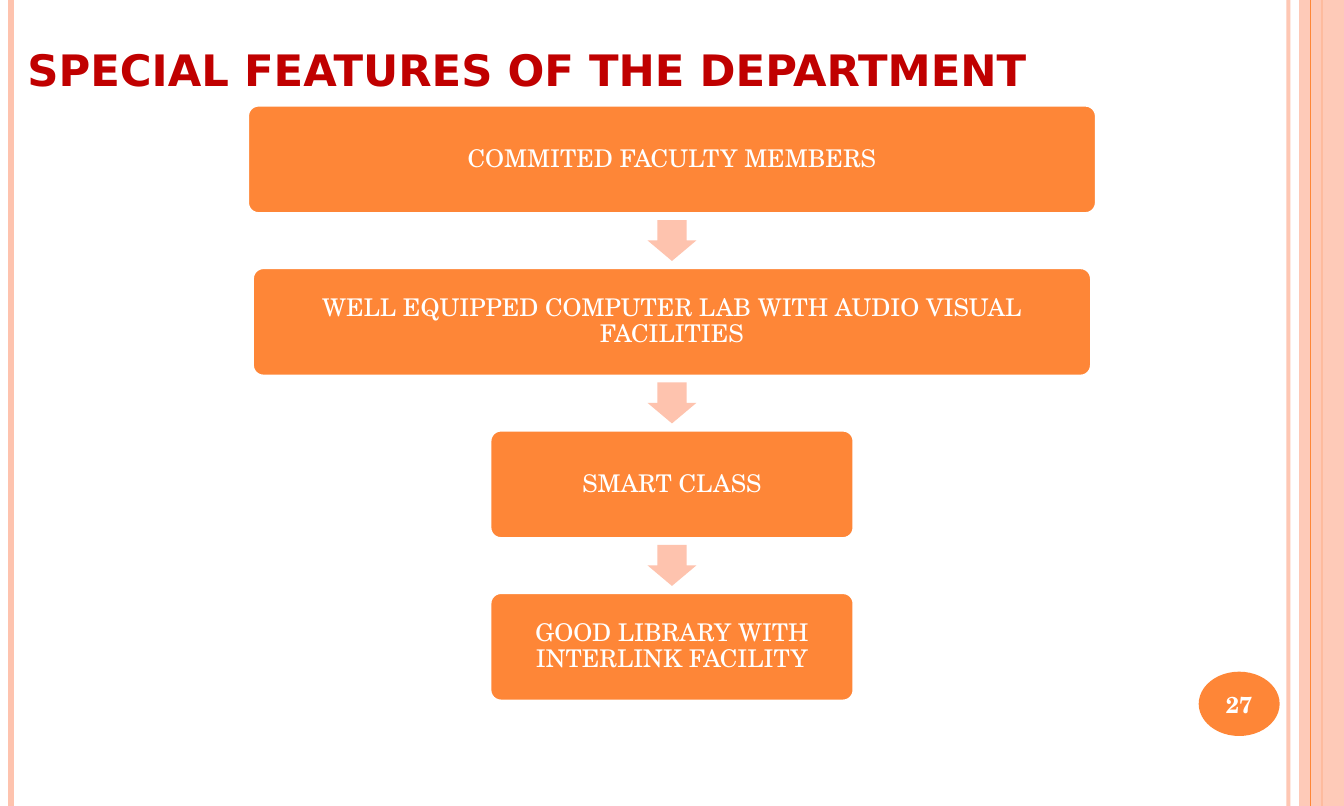
from pptx import Presentation
from pptx import util as u
from pptx.dml.color import RGBColor
from pptx.enum import shapes, text
from pptx.oxml.ns import qn
from lxml import etree

ORANGE = RGBColor(0xFE, 0x86, 0x37)
PEACH = RGBColor(0xFE, 0xC3, 0xAE)
RED = RGBColor(0xC0, 0x00, 0x00)
WHITE = RGBColor(0xFF, 0xFF, 0xFF)
SERIF = "TeX Gyre Schola"
SANS = "DejaVu Sans"
WIDE, HIGH = u.Cm(35), u.Cm(21)  # metric page size
KIND = shapes.MSO_SHAPE


def write(shape, words, size=18, font=SERIF, color=WHITE, bold=False,
          align=text.PP_ALIGN.CENTER, anchor=text.MSO_ANCHOR.MIDDLE,
          inset=(0.04, 0.04), space=1.0):
    """Put one formatted paragraph into a shape."""
    frame = shape.text_frame
    frame.word_wrap = True
    frame.auto_size = text.MSO_AUTO_SIZE.NONE
    frame.vertical_anchor = anchor
    frame.margin_left = frame.margin_right = u.Inches(inset[0])
    frame.margin_top = frame.margin_bottom = u.Inches(inset[1])
    para = frame.paragraphs[0]
    para.alignment = align
    para.line_spacing = space
    run = para.add_run()
    run.text = words
    run.font.size = u.Pt(size)
    run.font.name = font
    run.font.bold = bold
    run.font.color.rgb = color


def fade(fill, share):
    """Set the opacity of a solid fill, in percent."""
    tint = fill._xPr.find(qn("a:solidFill"))[0]
    etree.SubElement(tint, qn("a:alpha")).set("val", str(share * 1000))


class Page:
    def __init__(self, deck):
        self.slide = deck.slides.add_slide(deck.slide_layouts[5])
        self.items = self.slide.shapes

    def title(self, words, left, top, width, height):
        head = self.items.title
        head.left, head.top = u.Inches(left), u.Inches(top)
        head.width, head.height = u.Inches(width), u.Inches(height)
        write(head, words, size=32, font=SANS, color=RED, bold=True,
              align=text.PP_ALIGN.LEFT, anchor=text.MSO_ANCHOR.TOP,
              inset=(0.12, 0.06))

    def shape(self, kind, left, top, width, height, color, edge=None, adj=()):
        item = self.items.add_shape(kind, u.Inches(left), u.Inches(top),
                                    u.Inches(width), u.Inches(height))
        item.shadow.inherit = False
        item.fill.solid()
        item.fill.fore_color.rgb = color
        if edge is None:
            item.line.fill.background()
        else:
            item.line.color.rgb = edge
            item.line.width = u.Pt(2)
        for i, value in enumerate(adj):
            item.adjustments[i] = value
        return item

    def stripe(self, x, color, width):
        """Draw a line over the full height of the slide."""
        line = self.items.add_connector(
            shapes.MSO_CONNECTOR.STRAIGHT,
            u.Inches(x), 0, u.Inches(x), HIGH)
        line.line.color.rgb = color
        line.line.width = u.Pt(width)
        etree.SubElement(line._element.spPr, qn("a:effectLst"))
        return line


def main():
    deck = Presentation()
    deck.slide_width, deck.slide_height = WIDE, HIGH
    page = Page(deck)

    # Side stripes and band
    fade(page.stripe(13.21, PEACH, 3).line.fill, 93)
    page.stripe(0.11, PEACH, 4.5)
    page.stripe(13.55, ORANGE, 1.5)
    band = page.shape(KIND.RECTANGLE, 13.32, 0, 0.46, HIGH.inches, PEACH)
    fade(band.fill, 87)
    page.stripe(13.44, ORANGE, 0.75)

    # Slide number
    badge = page.shape(KIND.OVAL, 12.29, 6.89, 0.83, 0.66, ORANGE)
    write(badge, "27", size=17, bold=True)

    # Title
    page.title("SPECIAL FEATURES OF THE DEPARTMENT", 0.16, 0.38, 12.81, 0.66)

    # Flow of features, centred on one axis
    steps = [
        ("COMMITED FACULTY MEMBERS", 8.7),
        ("WELL EQUIPPED COMPUTER LAB WITH AUDIO VISUAL FACILITIES", 8.6),
        ("SMART CLASS", 3.73),
        ("GOOD LIBRARY WITH INTERLINK FACILITY", 3.73),
    ]
    mid, first, pitch, tall = WIDE.inches / 2, 1.08, 5 / 3, 1.11
    for i, (words, width) in enumerate(steps):
        top = first + i * pitch
        if i:
            page.shape(KIND.DOWN_ARROW, mid - 0.25, top - 0.49, 0.5, 0.42,
                       PEACH, adj=(0.6, 0.5))
        box = page.shape(KIND.ROUNDED_RECTANGLE, mid - width / 2, top,
                         width, tall, ORANGE, edge=WHITE, adj=(0.1,))
        write(box, words, space=0.9)

    deck.save("out.pptx")


if __name__ == "__main__":
    main()
